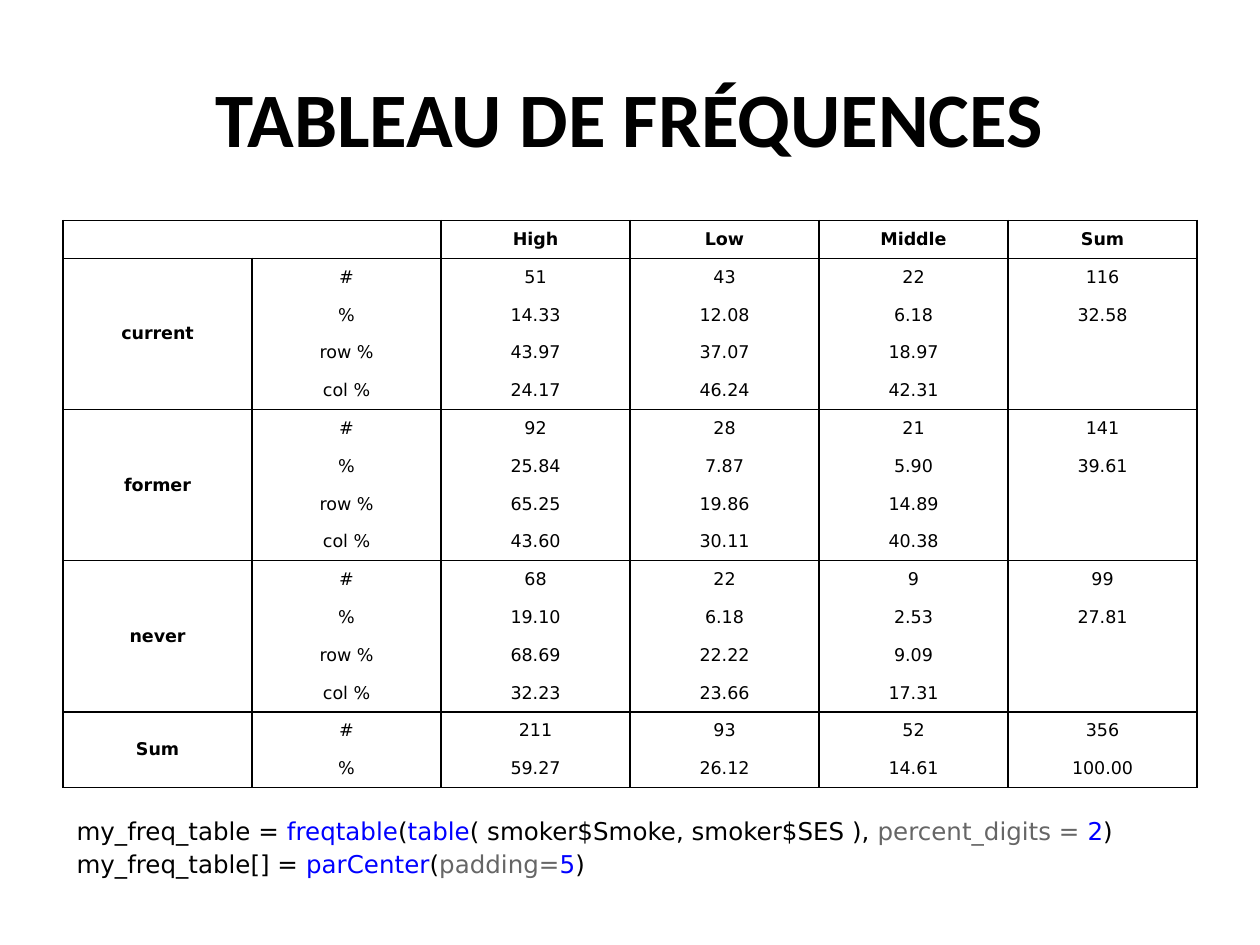
from lxml import etree
from pptx import Presentation
from pptx import util as u
from pptx.dml.color import RGBColor
from pptx.enum import text
from pptx.oxml.ns import qn

BLACK, WHITE, BLUE, GRAY = "000000", "FFFFFF", "0000FF", "666666"
CENTER = text.PP_ALIGN.CENTER
MIDDLE = text.MSO_ANCHOR.MIDDLE

HEADINGS = ["High", "Low", "Middle", "Sum"]
MEASURES = ["#", "%", "row %", "col %"]
GROUPS = {
    "current": [["51", "43", "22", "116"],
                ["14.33", "12.08", "6.18", "32.58"],
                ["43.97", "37.07", "18.97", ""],
                ["24.17", "46.24", "42.31", ""]],
    "former": [["92", "28", "21", "141"],
               ["25.84", "7.87", "5.90", "39.61"],
               ["65.25", "19.86", "14.89", ""],
               ["43.60", "30.11", "40.38", ""]],
    "never": [["68", "22", "9", "99"],
              ["19.10", "6.18", "2.53", "27.81"],
              ["68.69", "22.22", "9.09", ""],
              ["32.23", "23.66", "17.31", ""]],
    "Sum": [["211", "93", "52", "356"],
            ["59.27", "26.12", "14.61", "100.00"]],
}
CODE = [
    [("my_freq_table = ", BLACK), ("freqtable", BLUE), ("(", BLACK), ("table", BLUE),
     ("( smoker$Smoke, smoker$SES ), ", BLACK), ("percent_digits = ", GRAY),
     ("2", BLUE), (")", BLACK)],
    [("my_freq_table[] = ", BLACK), ("parCenter", BLUE), ("(", BLACK),
     ("padding=", GRAY), ("5", BLUE), (")", BLACK)],
]


def rgb(color):
    return RGBColor.from_string(color)


def write(para, words, size=10, font="DejaVu Sans", color=BLACK, bold=False):
    span = para.add_run()
    span.text = words
    span.font.size = u.Pt(size)
    span.font.name = font
    span.font.bold = bold
    span.font.color.rgb = rgb(color)


def space(para, indent, gap=0):
    """Indent a paragraph on both sides and put a gap above and below it."""
    para.space_before = para.space_after = u.Pt(gap)
    props = para._p.get_or_add_pPr()
    for side in ("marL", "marR"):
        props.set(side, str(u.Inches(indent)))
    props.set("indent", "0")


def add_frame(page, box, anchor):
    frame = page.shapes.add_textbox(*map(u.Inches, box)).text_frame
    frame.word_wrap = True
    frame.vertical_anchor = anchor
    return frame


def add_title(page, box):
    para = add_frame(page, box, MIDDLE).paragraphs[0]
    para.alignment = CENTER
    write(para, "TABLEAU DE FRÉQUENCES", size=44, font="Calibri", bold=True)


def set_borders(cell, **sides):
    props = cell._tc.get_or_add_tcPr()
    for side, shown in sides.items():
        line = etree.SubElement(props, qn(f"a:ln{side}"), w=str(u.Pt(1)))
        if shown:
            fill = etree.SubElement(line, qn("a:solidFill"))
            etree.SubElement(fill, qn("a:srgbClr"), val=BLACK)
        else:
            etree.SubElement(line, qn("a:noFill"))


def fill_cell(cell, words, bold, indent, gap):
    cell.margin_left = cell.margin_right = cell.margin_top = cell.margin_bottom = 0
    cell.vertical_anchor = MIDDLE
    cell.fill.solid()
    cell.fill.fore_color.rgb = rgb(WHITE)
    para = cell.text_frame.paragraphs[0]
    para.alignment = CENTER
    if words:
        space(para, indent, gap)
        write(para, words, bold=bold)
    else:
        # Keeps an empty cell from stretching its row
        etree.SubElement(para._p, qn("a:endParaRPr"), sz="1000")


def add_frequency_table(page, box):
    row_count = 1 + sum(len(rows) for rows in GROUPS.values())
    column_count = 2 + len(HEADINGS)
    frame = page.shapes.add_table(row_count, column_count, *map(u.Inches, box))
    table = frame.table
    table.first_row = table.horz_banding = False

    # Header row
    table.cell(0, 0).merge(table.cell(0, 1))
    for col, words in enumerate(["", "", *HEADINGS]):
        cell = table.cell(0, col)
        set_borders(cell, L=col != 1, R=col != 0, T=True, B=True)
        fill_cell(cell, words, bold=True, indent=0.04, gap=0)

    # One block of rows per group, ruled only around the block
    top = 1
    for name, rows in GROUPS.items():
        last = len(rows) - 1
        table.cell(top, 0).merge(table.cell(top + last, 0))
        for step, values in enumerate(rows):
            label = name if step == 0 else ""
            for col, words in enumerate([label, MEASURES[step], *values]):
                cell = table.cell(top + step, col)
                set_borders(cell, L=True, R=True, T=step == 0,
                            B=step == last or cell.is_merge_origin)
                fill_cell(cell, words, bold=col == 0, indent=0.07, gap=5)
        top += len(rows)


def add_code(page, box):
    frame = add_frame(page, box, text.MSO_ANCHOR.TOP)
    for number, line in enumerate(CODE):
        para = frame.add_paragraph() if number else frame.paragraphs[0]
        space(para, 0.01, gap=1)
        for words, color in line:
            write(para, words, size=14, color=color)


def main():
    deck = Presentation()
    deck.slide_width, deck.slide_height = u.Inches(10), u.Inches(7.5)
    page = deck.slides.add_slide(deck.slide_layouts[6])
    add_title(page, (0.5, 0.3, 9, 1.25))
    add_frequency_table(page, (0.5, 1.75, 9, 4.5))
    add_code(page, (0.5, 6.43, 9, 0.84))
    deck.save("out.pptx")


if __name__ == "__main__":
    main()
